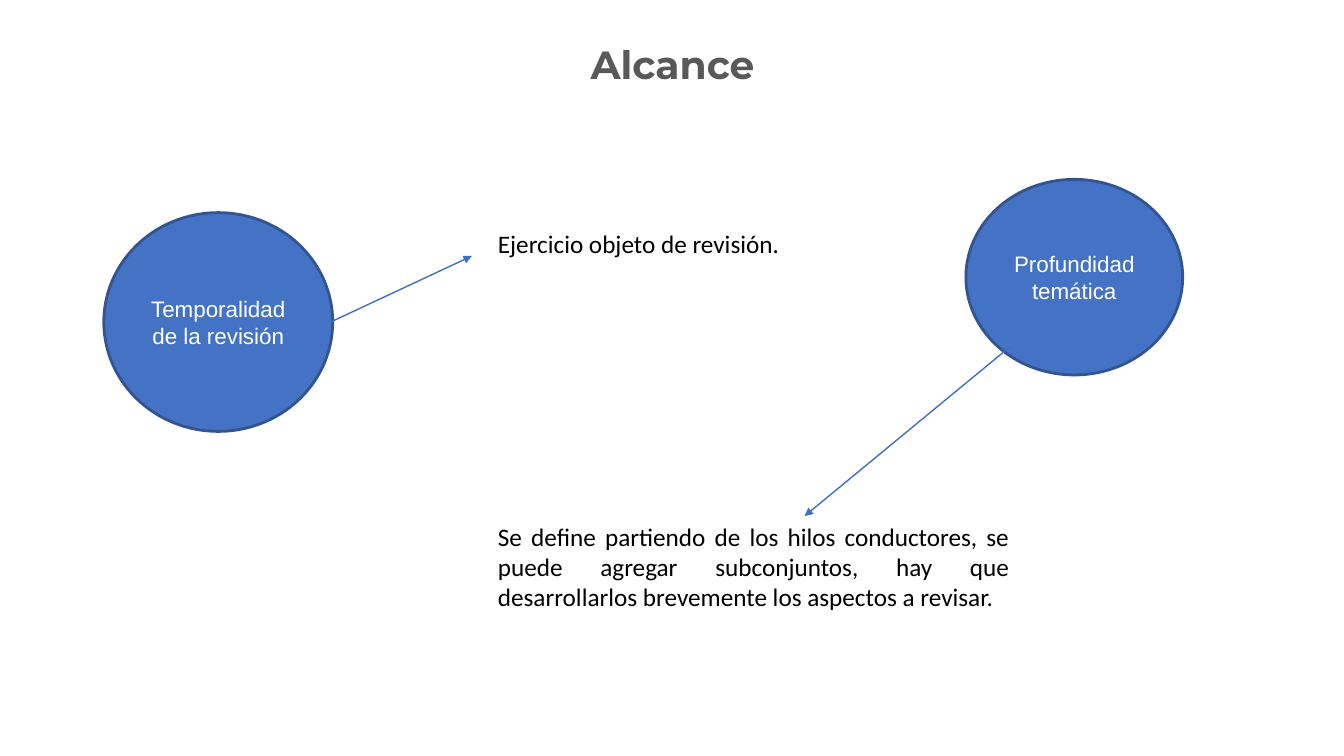
from dataclasses import dataclass

from lxml.etree import SubElement
from pptx import Presentation
from pptx.dml.color import RGBColor
from pptx.enum.shapes import MSO_CONNECTOR, MSO_SHAPE
from pptx.enum.text import MSO_ANCHOR, PP_ALIGN
from pptx.oxml.ns import qn
from pptx.util import Inches, Pt


@dataclass(frozen=True)
class TextStyle:
    font: str
    size: int
    color: str
    bold: bool = False


@dataclass(frozen=True)
class Theme:
    title: TextStyle = TextStyle("Montserrat", 28, "595959", True)
    topic: TextStyle = TextStyle("Arial", 16, "FFFFFF")
    note: TextStyle = TextStyle("Calibri", 18, "000000")
    circle_fill: str = "4472C4"
    circle_line: str = "325491"
    arrow: str = "3F6FC3"


class ScopeSlide:
    def __init__(self, deck, theme):
        self.theme = theme
        self.page = deck.slides.add_slide(deck.slide_layouts[6])

    def set_text(self, shape, text, style, alignment):
        frame = shape.text_frame
        frame.word_wrap = True
        para = frame.paragraphs[0]
        para.text = text
        para.alignment = alignment
        para.font.name = style.font
        para.font.size = Pt(style.size)
        para.font.bold = style.bold
        para.font.color.rgb = RGBColor.from_string(style.color)
        return frame

    def add_title(self, text, left, top, width, height):
        box = self.page.shapes.add_textbox(
            Inches(left), Inches(top), Inches(width), Inches(height))
        frame = self.set_text(box, text, self.theme.title, PP_ALIGN.CENTER)
        frame.margin_left = frame.margin_right = Inches(0.05)
        frame.paragraphs[0].line_spacing = 0.9

    def add_note(self, text, left, top, width, height, alignment=PP_ALIGN.LEFT):
        box = self.page.shapes.add_textbox(
            Inches(left), Inches(top), Inches(width), Inches(height))
        self.set_text(box, text, self.theme.note, alignment)

    def add_topic(self, text, left, top, width, height):
        circle = self.page.shapes.add_shape(
            MSO_SHAPE.OVAL, Inches(left), Inches(top), Inches(width), Inches(height))
        circle.shadow.inherit = False
        circle.fill.solid()
        circle.fill.fore_color.rgb = RGBColor.from_string(self.theme.circle_fill)
        circle.line.color.rgb = RGBColor.from_string(self.theme.circle_line)
        circle.line.width = Pt(2)
        frame = self.set_text(circle, text, self.theme.topic, PP_ALIGN.CENTER)
        frame.vertical_anchor = MSO_ANCHOR.MIDDLE

    def add_arrow(self, start, end):
        arrow = self.page.shapes.add_connector(
            MSO_CONNECTOR.STRAIGHT, *map(Inches, start), *map(Inches, end))
        arrow.line.color.rgb = RGBColor.from_string(self.theme.arrow)
        arrow.line.width = Pt(1)
        SubElement(arrow.line._get_or_add_ln(), qn("a:tailEnd"), type="triangle")
        SubElement(arrow._element.spPr, qn("a:effectLst"))


def main():
    deck = Presentation()
    deck.slide_width, deck.slide_height = Inches(13.33), Inches(7.5)

    slide = ScopeSlide(deck, Theme())
    slide.add_title("Alcance", 0.92, 0.4, 11.5, 0.62)

    slide.add_topic("Temporalidad de la revisión", 1.03, 2.11, 2.27, 2.17)
    slide.add_topic("Profundidad temática", 9.58, 1.78, 2.15, 1.94)

    slide.add_arrow((3.29, 3.19), (4.68, 2.54))
    slide.add_note("Ejercicio objeto de revisión.", 4.84, 2.22, 3.02, 0.4)
    slide.add_note(
        "Se define partiendo de los hilos conductores, se puede agregar "
        "subconjuntos, hay que desarrollarlos brevemente los aspectos a revisar.",
        4.84, 5.12, 5.27, 1.01, PP_ALIGN.JUSTIFY)
    slide.add_arrow((10.03, 3.43), (7.98, 5.12))

    deck.save("out.pptx")


if __name__ == "__main__":
    main()
